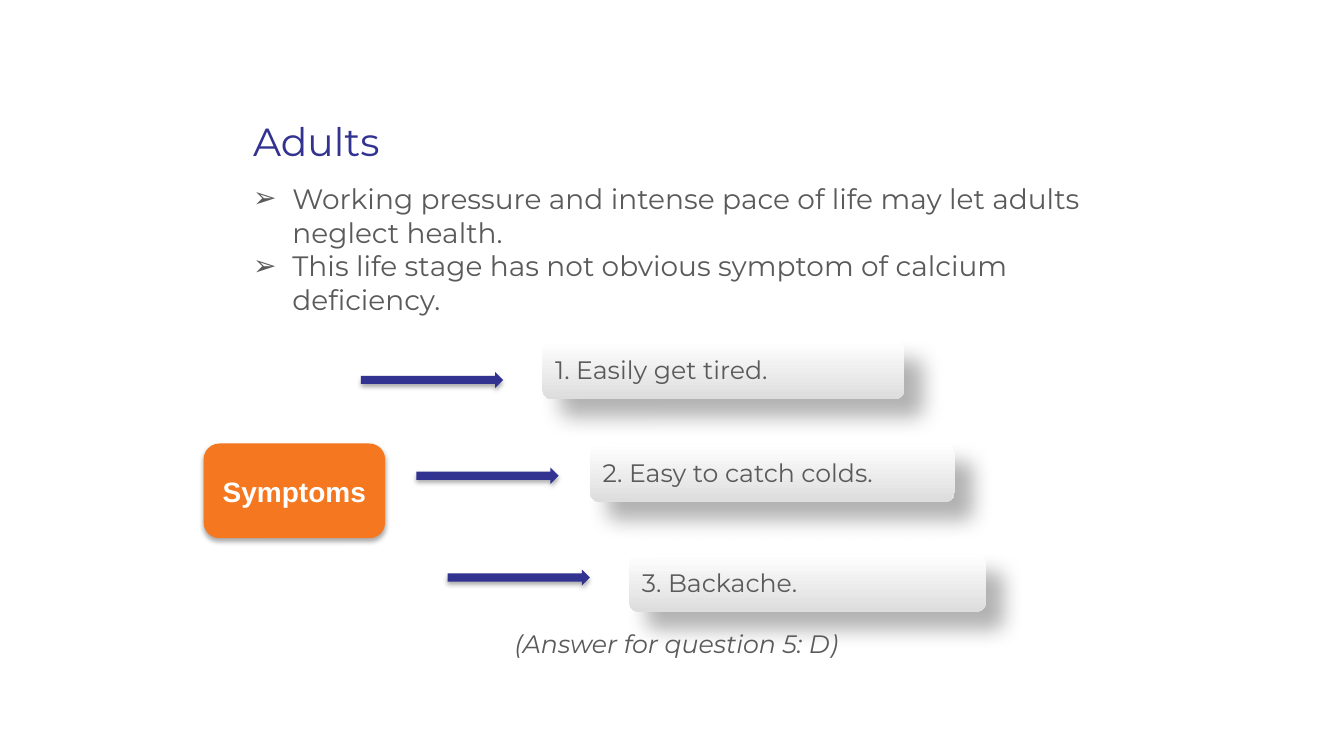
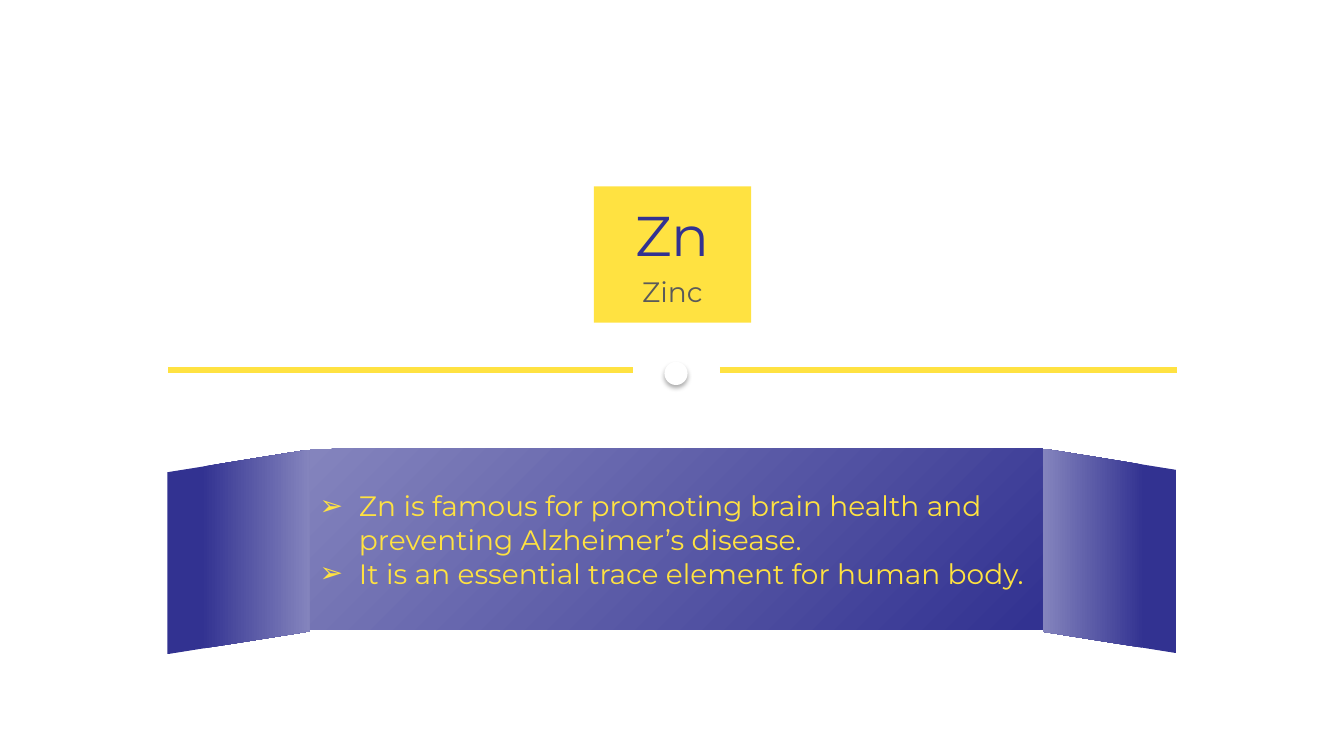
from lxml.etree import SubElement
from pptx import Presentation
from pptx.dml.color import RGBColor
from pptx.enum.shapes import MSO_CONNECTOR, MSO_SHAPE as Preset
from pptx.enum.text import MSO_ANCHOR as Anchor, MSO_AUTO_SIZE as AutoSize, PP_ALIGN as Align
from pptx.oxml.ns import qn
from pptx.util import Emu, Pt

EMU_PER_PX = 9144  # 100 px to the inch
NAVY = RGBColor(0x32, 0x32, 0x91)
LAVENDER = RGBColor(0x84, 0x84, 0xBD)
YELLOW = RGBColor(0xFF, 0xE2, 0x41)
ORANGE = RGBColor(0xF5, 0x78, 0x20)
GREY = RGBColor(0x5A, 0x5A, 0x5A)
SILVER = RGBColor(0xDD, 0xDD, 0xDD)
WHITE = RGBColor(0xFF, 0xFF, 0xFF)

# Shadows: opacity in percent, blur and distance in points, direction in degrees
SOFT_SHADOW = (30, 15, 18, 45)
THIN_SHADOW = (32, 3.5, 2.2, 90)


def px(length):
    return Emu(length * EMU_PER_PX)


class Deck:
    """Holds the shared style and the slide being filled."""

    font = "Montserrat"
    bullet_indent = 39

    def __init__(self):
        self.presentation = Presentation()
        self.presentation.slide_width = px(1333)
        self.presentation.slide_height = px(750)
        self.slide = None

    def new_slide(self):
        layout = self.presentation.slide_layouts.get_by_name("Title and Content")
        self.slide = self.presentation.slides.add_slide(layout)

    def place(self, shape, left, top, width, height):
        shape.left, shape.top = px(left), px(top)
        shape.width, shape.height = px(width), px(height)
        return shape

    def add_text(self, shape, text, size, color, align=Align.LEFT, anchor=Anchor.MIDDLE,
                 gap=0, bullet=False, font=None, bold=False, italic=False):
        """Add a paragraph; gap is the space before it in points."""
        frame = shape.text_frame
        frame.word_wrap = True
        frame.auto_size = AutoSize.NONE
        frame.vertical_anchor = anchor
        paragraph = frame.paragraphs[0]
        if paragraph.runs:
            paragraph = frame.add_paragraph()
        paragraph.alignment = align
        paragraph.space_before = Pt(gap)
        if bullet:
            self.add_bullet(paragraph)
        run = paragraph.add_run()
        run.text = text
        run.font.name = font or self.font
        run.font.size = Pt(size)
        run.font.bold = bold
        run.font.italic = italic
        run.font.color.rgb = color

    def add_bullet(self, paragraph):
        properties = paragraph._p.get_or_add_pPr()
        indent = px(self.bullet_indent)
        properties.set("marL", str(indent))
        properties.set("indent", str(-indent))
        SubElement(properties, qn("a:buFont")).set("typeface", "Arial")
        SubElement(properties, qn("a:buChar")).set("char", "➢")

    def title(self, text, box, size, **style):
        shape = self.place(self.slide.shapes.title, *box)
        self.add_text(shape, text, size, NAVY, **style)
        return shape

    def bullets(self, items, box, color, anchor):
        shape = self.place(self.slide.placeholders[1], *box)
        for item in items:
            self.add_text(shape, item, 20, color, anchor=anchor, bullet=True)
        return shape

    def textbox(self, text, box, size, color, **style):
        shape = self.slide.shapes.add_textbox(*map(px, box))
        self.add_text(shape, text, size, color, **style)

    def shape(self, preset, box, color=None, shadow=None):
        shape = self.slide.shapes.add_shape(preset, *map(px, box))
        shape.line.fill.background()
        shape.shadow.inherit = False
        if color is not None:
            self.solid(shape, color)
        if shadow:
            self.cast_shadow(shape, *shadow)
        return shape

    def solid(self, shape, color):
        shape.fill.solid()
        shape.fill.fore_color.rgb = color

    def gradient(self, shape, start, end, first_stop=0.0):
        """Fade from top to bottom."""
        shape.fill.gradient()
        shape.fill.gradient_angle = 270
        first, last = shape.fill.gradient_stops
        first.color.rgb, last.color.rgb = start, end
        first.position = first_stop

    def corner_gradient(self, shape, start, end):
        """Fade outwards from the bottom right corner."""
        self.gradient(shape, start, end, 0.01)
        fill = shape.element.spPr.find(qn("a:gradFill"))
        fill.remove(fill.find(qn("a:lin")))
        route = SubElement(fill, qn("a:path"))
        route.set("path", "circle")
        focus = SubElement(route, qn("a:fillToRect"))
        focus.set("l", "100000")
        focus.set("t", "100000")

    def cast_shadow(self, shape, opacity, blur, distance, direction):
        effects = shape.element.spPr.find(qn("a:effectLst"))
        shadow = SubElement(effects, qn("a:outerShdw"))
        shadow.set("blurRad", str(Pt(blur)))
        shadow.set("dist", str(Pt(distance)))
        shadow.set("dir", str(direction * 60000))
        shadow.set("algn", "tl")
        shadow.set("rotWithShape", "0")
        color = SubElement(shadow, qn("a:srgbClr"))
        color.set("val", "000000")
        SubElement(color, qn("a:alpha")).set("val", str(opacity * 1000))

    def rule(self, left, right, top):
        line = self.slide.shapes.add_connector(
            MSO_CONNECTOR.STRAIGHT, px(left), px(top), px(right), px(top))
        line.line.color.rgb = YELLOW
        line.line.width = Pt(4.5)
        SubElement(line.element.spPr, qn("a:effectLst"))

    def ribbon_end(self, box, rotation, flipped=False):
        end = self.shape(Preset.PARALLELOGRAM, box)
        end.adjustments[0] = 0.16
        end.rotation = rotation
        if flipped:
            end.element.spPr.find(qn("a:xfrm")).set("flipH", "1")
        self.gradient(end, NAVY, LAVENDER, 0.24)


def add_adults_slide(deck):
    deck.new_slide()
    deck.title("Adults", (241, 111, 898, 57), 28, anchor=Anchor.TOP)
    deck.bullets(
        ["Working pressure and intense pace of life may let adults neglect health.",
         "This life stage has not obvious symptom of calcium deficiency."],
        (241, 175, 898, 151), GREY, Anchor.TOP)

    symptoms = [
        ("1. Easily get tired.", (538, 338, 359, 58), (358, 369)),
        ("2. Easy to catch colds.", (585, 440, 362, 58), (413, 464)),
        ("3. Backache.", (624, 549, 354, 58), (444, 565)),
    ]
    for text, box, arrow in symptoms:
        card = deck.shape(Preset.ROUNDED_RECTANGLE, box, shadow=SOFT_SHADOW)
        deck.gradient(card, WHITE, SILVER)
        deck.add_text(card, text, 18, GREY)
        deck.shape(Preset.RIGHT_ARROW, (*arrow, 141, 16), NAVY, THIN_SHADOW)

    deck.textbox("(Answer for question 5: D)", (482, 618, 378, 40), 18, GREY,
                 align=Align.CENTER, anchor=Anchor.TOP, italic=True)
    label = deck.shape(Preset.ROUNDED_RECTANGLE, (202, 440, 180, 94), ORANGE, THIN_SHADOW)
    deck.add_text(label, "Symptoms", 20, WHITE, align=Align.CENTER, font="Arial", bold=True)


def add_zinc_slide(deck):
    deck.new_slide()
    tile = deck.title("Zn", (589, 185, 156, 135), 40, align=Align.CENTER)
    deck.add_text(tile, "Zinc", 20, GREY, align=Align.CENTER, gap=5)
    deck.solid(tile, YELLOW)

    for left, right in ((167, 628), (714, 1167)):
        deck.rule(left, right, 367)
    deck.shape(Preset.OVAL, (659, 359, 23, 23), WHITE, THIN_SHADOW)

    banner = deck.bullets(
        ["Zn is famous for promoting brain health and preventing Alzheimer’s disease.",
         "It is an essential trace element for human body."],
        (307, 445, 727, 180), YELLOW, Anchor.MIDDLE)
    deck.corner_gradient(banner, NAVY, LAVENDER)
    deck.ribbon_end((135, 477, 203, 141), 270, flipped=True)
    deck.ribbon_end((999, 480, 203, 133), 90)


def main():
    deck = Deck()
    add_adults_slide(deck)
    add_zinc_slide(deck)
    deck.presentation.save("out.pptx")


if __name__ == "__main__":
    main()
